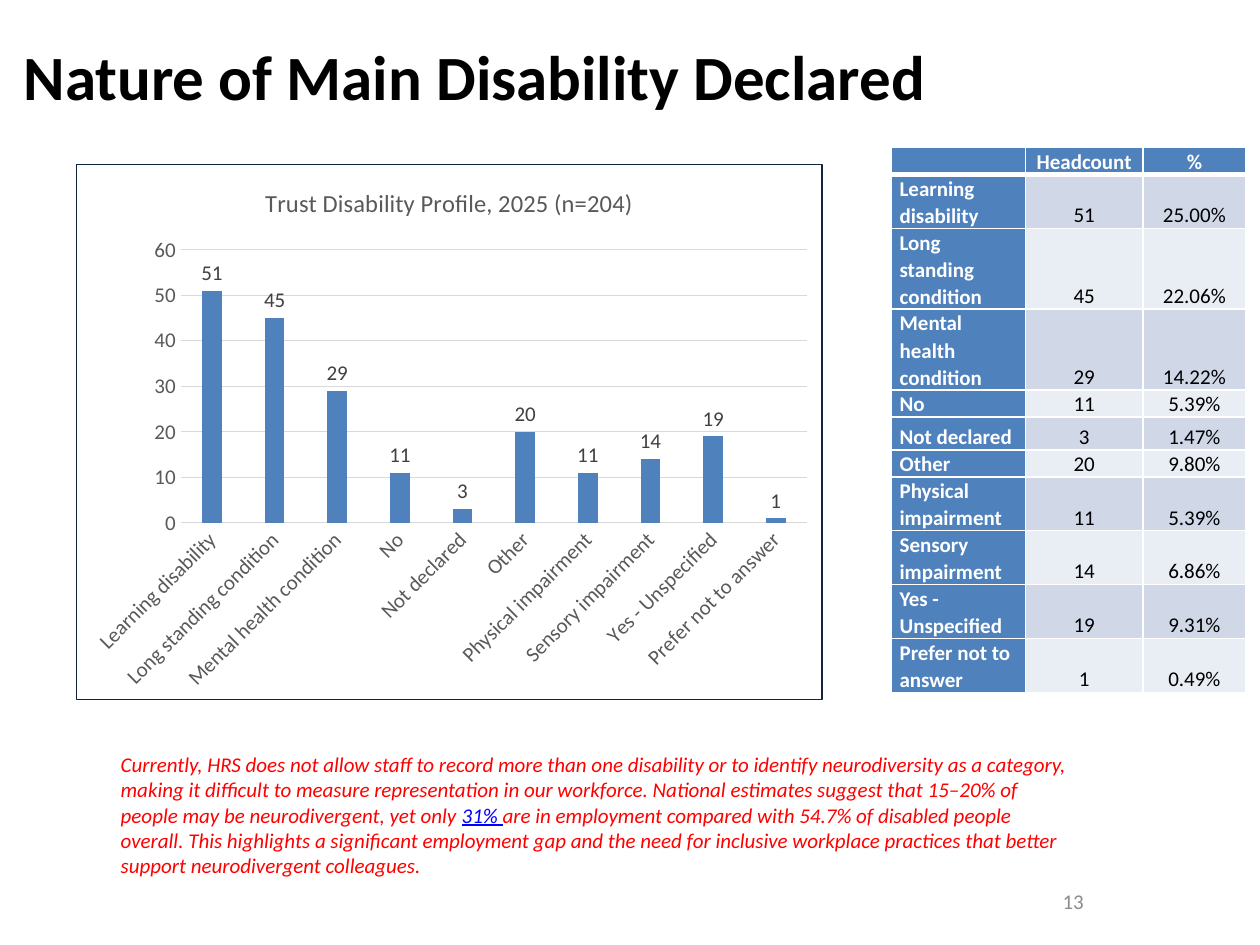
from dataclasses import dataclass

from lxml import etree
from pptx import Presentation
from pptx import util as u
from pptx.chart.data import CategoryChartData
from pptx.dml.color import RGBColor
from pptx.enum import chart as charts, text
from pptx.oxml.ns import qn


@dataclass(frozen=True)
class Theme:
    font: str = "Calibri"
    black: str = "000000"
    white: str = "FFFFFF"
    blue: str = "4F81BD"
    bands: tuple = ("D0D8E8", "E9EDF4")
    red: str = "FF0000"
    link: str = "0000FF"
    muted: str = "8C8C8C"
    axis_text: str = "595959"
    label_text: str = "404040"
    grid: str = "D9D9D9"
    frame: str = "0F243E"
    title_size: float = 36
    chart_title_size: float = 14
    body_size: float = 12


@dataclass(frozen=True)
class Area:
    """Left, top, width and height as shares of the slide's size."""
    left: float
    top: float
    width: float
    height: float

    def lengths(self) -> tuple:
        return tuple(u.Inches(share * side) for share, side in
                     zip((self.left, self.top, self.width, self.height), SLIDE * 2))


@dataclass(frozen=True)
class Disability:
    name: str
    headcount: int
    row_height: float


THEME = Theme()
SLIDE = (10, 7.5)
DISABILITIES = [
    Disability("Learning disability", 51, 0.21),
    Disability("Long standing condition", 45, 0.4),
    Disability("Mental health condition", 29, 0.4),
    Disability("No", 11, 0.2),
    Disability("Not declared", 3, 0.26),
    Disability("Other", 20, 0.2),
    Disability("Physical impairment", 11, 0.21),
    Disability("Sensory impairment", 14, 0.2),
    Disability("Yes - Unspecified", 19, 0.31),
    Disability("Prefer not to answer", 1, 0.2),
]
TOTAL = sum(item.headcount for item in DISABILITIES)
COLUMN_WIDTHS = (1.07, 0.93, 0.82)
HEADER_HEIGHT = 0.21


def rgb(value: str) -> RGBColor:
    return RGBColor.from_string(value)


def style_font(font, *, size=THEME.body_size, color=THEME.black, bold=False,
               italic=False, underline=False) -> None:
    font.name, font.size = THEME.font, u.Pt(size)
    font.bold, font.italic, font.underline = bold, italic, underline
    font.color.rgb = rgb(color)


def add_text(paragraph, content: str, *, align=text.PP_ALIGN.LEFT, **font_format) -> None:
    paragraph.alignment = align
    run = paragraph.add_run()
    run.text = content
    style_font(run.font, **font_format)


def add_box(slide, area: Area, anchor=text.MSO_ANCHOR.MIDDLE):
    frame = slide.shapes.add_textbox(*area.lengths()).text_frame
    frame.word_wrap = True
    frame.vertical_anchor = anchor
    return frame.paragraphs[0]


def add_border(cell, side: str, width: float) -> None:
    properties = cell._tc.get_or_add_tcPr()
    line = etree.SubElement(properties, qn(f"a:ln{side}"), w=str(u.Pt(width)))
    fill = etree.SubElement(line, qn("a:solidFill"))
    etree.SubElement(fill, qn("a:srgbClr"), val=THEME.white)


def fill_cell(cell, content: str, fill: str, *, header=False, **text_format) -> None:
    for side in "LRTB":
        add_border(cell, side, 3 if header and side == "B" else 1)
    cell.fill.solid()
    cell.fill.fore_color.rgb = rgb(fill)
    cell.vertical_anchor = text.MSO_ANCHOR.BOTTOM
    cell.margin_left = cell.margin_right = u.Inches(0.07)
    cell.margin_top = cell.margin_bottom = 0
    paragraph = cell.text_frame.paragraphs[0]
    paragraph.line_spacing, paragraph.space_after = 1.07, u.Pt(8)
    if content:
        add_text(paragraph, content, **text_format)
    else:
        # An empty cell still needs a type size to keep its row low
        etree.SubElement(paragraph._p, qn("a:endParaRPr"), sz=str(int(THEME.body_size * 100)))


def add_headcount_table(slide, area: Area) -> None:
    rows = [("", "Headcount", "%")]
    rows += [(item.name, str(item.headcount), f"{item.headcount / TOTAL:.2%}")
             for item in DISABILITIES]
    table = slide.shapes.add_table(len(rows), len(COLUMN_WIDTHS), *area.lengths()).table
    for column, width in zip(table.columns, COLUMN_WIDTHS):
        column.width = u.Inches(width)
    heights = [HEADER_HEIGHT] + [item.row_height for item in DISABILITIES]
    for r, (values, height) in enumerate(zip(rows, heights)):
        table.rows[r].height = u.Inches(height)
        for c, value in enumerate(values):
            heading = r == 0 or c == 0
            fill_cell(table.cell(r, c), value,
                      THEME.blue if heading else THEME.bands[(r - 1) % 2],
                      header=r == 0, bold=heading,
                      color=THEME.white if heading else THEME.black,
                      align=text.PP_ALIGN.CENTER if c else text.PP_ALIGN.LEFT)


def set_line(line, color: str) -> None:
    line.color.rgb = rgb(color)
    line.width = u.Pt(0.75)


def set_plot_layout(chart, shares: dict) -> None:
    plot_area = chart._chartSpace.chart.plotArea
    for old in plot_area.findall(qn("c:layout")):
        plot_area.remove(old)
    layout = etree.Element(qn("c:layout"))
    plot_area.insert(0, layout)
    manual = etree.SubElement(layout, qn("c:manualLayout"))
    settings = {"layoutTarget": "inner", "xMode": "edge", "yMode": "edge", **shares}
    for tag, value in settings.items():
        etree.SubElement(manual, qn(f"c:{tag}"), val=str(value))


def add_profile_chart(slide, area: Area) -> None:
    data = CategoryChartData()
    data.categories = [item.name for item in DISABILITIES]
    data.add_series("Series 1", [item.headcount for item in DISABILITIES])
    chart = slide.shapes.add_chart(
        charts.XL_CHART_TYPE.COLUMN_CLUSTERED, *area.lengths(), data).chart
    style_font(chart.font)
    chart.has_legend = False
    chart.has_title = True
    add_text(chart.chart_title.text_frame.paragraphs[0], "Trust Disability Profile, 2025 (n=204)",
             align=text.PP_ALIGN.CENTER, size=THEME.chart_title_size, color=THEME.axis_text)
    chart.chart_title.include_in_layout = False
    set_plot_layout(chart, {"x": 0.14, "y": 0.16, "w": 0.84, "h": 0.51})

    # Axes
    for axis in (chart.category_axis, chart.value_axis):
        axis.major_tick_mark = axis.minor_tick_mark = charts.XL_TICK_MARK.NONE
        style_font(axis.tick_labels.font, color=THEME.axis_text)
    set_line(chart.category_axis.format.line, THEME.grid)
    label_body = chart.category_axis._element.find(qn("c:txPr")).find(qn("a:bodyPr"))
    label_body.set("rot", str(-45 * 60000))
    values = chart.value_axis
    values.minimum_scale, values.maximum_scale, values.major_unit = 0, 60, 10
    values.format.line.fill.background()
    set_line(values.major_gridlines.format.line, THEME.grid)

    # Columns and their values
    plot = chart.plots[0]
    plot.gap_width, plot.overlap, plot.vary_by_categories = 219, -27, False
    series = plot.series[0]
    series.format.fill.solid()
    series.format.fill.fore_color.rgb = rgb(THEME.blue)
    labels = series.data_labels
    labels.show_value = True
    labels.position = charts.XL_LABEL_POSITION.OUTSIDE_END
    style_font(labels.font, color=THEME.label_text)

    # Frame around the chart
    frame = etree.Element(qn("c:spPr"))
    chart._chartSpace.chart.addnext(frame)
    etree.SubElement(frame, qn("a:noFill"))
    line = etree.SubElement(frame, qn("a:ln"), w=str(u.Pt(0.75)))
    fill = etree.SubElement(line, qn("a:solidFill"))
    etree.SubElement(fill, qn("a:srgbClr"), val=THEME.frame)


def main() -> None:
    presentation = Presentation()
    presentation.slide_width, presentation.slide_height = map(u.Inches, SLIDE)
    slide = presentation.slides.add_slide(presentation.slide_layouts[6])

    # Title and slide number
    add_text(add_box(slide, Area(0.009, 0.004, 0.762, 0.152)),
             "Nature of Main Disability Declared", size=THEME.title_size, bold=True)
    add_text(add_box(slide, Area(0.637, 0.927, 0.233, 0.053)), "13",
             align=text.PP_ALIGN.RIGHT, color=THEME.muted)

    # Note on neurodiversity
    note = add_box(slide, Area(0.086, 0.789, 0.776, 0.148), text.MSO_ANCHOR.TOP)
    add_text(note, "Currently, HRS does not allow staff to record more than one disability or to "
             "identify neurodiversity as a category, making it difficult to measure representation "
             "in our workforce. National estimates suggest that 15–20% of people may be "
             "neurodivergent, yet only ", color=THEME.red, italic=True)
    add_text(note, "31% ", color=THEME.link, italic=True, underline=True)
    add_text(note, "are in employment compared with 54.7% of disabled people overall. This "
             "highlights a significant employment gap and the need for inclusive workplace "
             "practices that better support neurodivergent colleagues.",
             color=THEME.red, italic=True)

    # Headcount by disability
    add_headcount_table(slide, Area(0.707, 0.156, 0.282, 0.373))
    add_profile_chart(slide, Area(0.06, 0.173, 0.593, 0.568))
    presentation.save("out.pptx")


if __name__ == "__main__":
    main()
